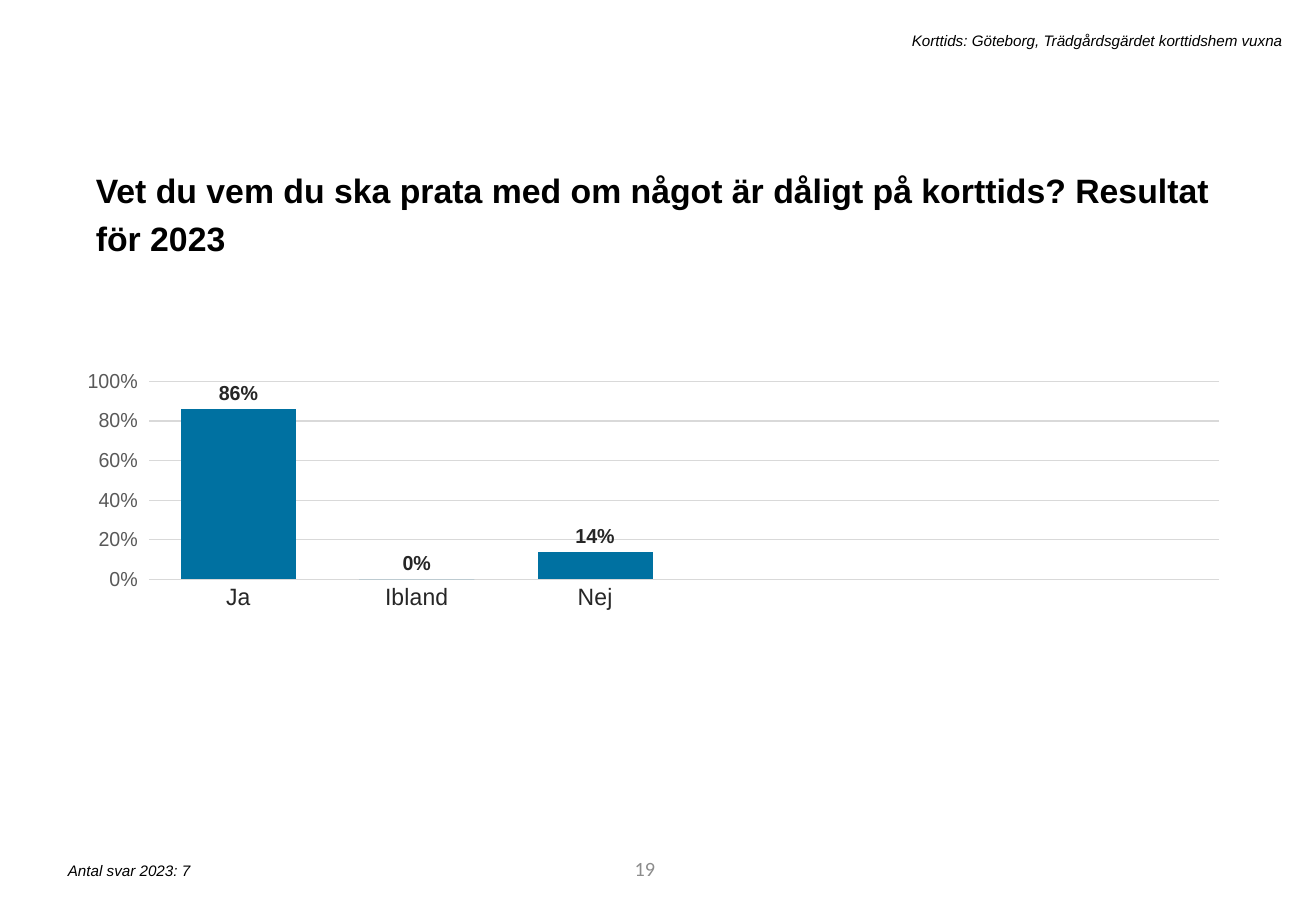
import pptx
import pptx.chart.data
import pptx.dml.color
import pptx.enum.chart
import pptx.enum.text
import pptx.oxml
import pptx.oxml.ns
import pptx.util

SCALE = 9144  # EMU per px, 100 px to the inch
ALIGN = pptx.enum.text.PP_ALIGN
ANCHOR = pptx.enum.text.MSO_ANCHOR
FIT = pptx.enum.text.MSO_AUTO_SIZE
TICK = pptx.enum.chart.XL_TICK_MARK


def px(*nums):
    return [pptx.util.Emu(n * SCALE) for n in nums]


def tint(code):
    return pptx.dml.color.RGBColor.from_string(code)


class Deck:
    font = "Arial"
    black = "000000"
    dark = "262626"
    grey = "595959"
    pale = "8C8C8C"
    rule = "D9D9D9"
    blue = "0071A1"

    def __init__(self, wide, high):
        self.file = pptx.Presentation()
        self.file.slide_width, self.file.slide_height = px(wide, high)
        self.slide = self.file.slides.add_slide(self.file.slide_layouts[6])

    def style(self, font, size, color, bold=False, ital=False, name=None):
        font.name = name or self.font
        font.size = pptx.util.Pt(size)
        font.bold = bold
        font.italic = ital
        font.color.rgb = tint(color)

    def text(self, box, words, size, color=black, align=ALIGN.LEFT,
             anchor=ANCHOR.TOP, fit=FIT.SHAPE_TO_FIT_TEXT, **look):
        """Add a one-paragraph text box and return the paragraph."""
        frame = self.slide.shapes.add_textbox(*px(*box)).text_frame
        frame.word_wrap = True
        frame.auto_size = fit
        frame.vertical_anchor = anchor
        para = frame.paragraphs[0]
        para.alignment = align
        run = para.add_run()
        run.text = words
        self.style(run.font, size, color, **look)
        return para

    def line(self, form):
        form.line.color.rgb = tint(self.rule)
        form.line.width = pptx.util.Pt(0.75)

    def place(self, chart, box, plot):
        """Fix the inner plot area; plot is in px from the chart corner."""
        sizes = (box[2], box[3]) * 2
        parts = [f'<c:{key}Mode val="edge"/>' for key in "xy"]
        parts += [f'<c:{key} val="{num / size}"/>'
                  for key, num, size in zip("xywh", plot, sizes)]
        layout = pptx.oxml.parse_xml(
            f'<c:layout {pptx.oxml.ns.nsdecls("c")}><c:manualLayout>'
            f'<c:layoutTarget val="inner"/>{"".join(parts)}'
            '</c:manualLayout></c:layout>')
        area = chart.element.find(".//" + pptx.oxml.ns.qn("c:plotArea"))
        for old in area.findall(pptx.oxml.ns.qn("c:layout")):
            area.remove(old)
        area.insert(0, layout)

    def bars(self, box, plot, cats, vals):
        data = pptx.chart.data.CategoryChartData(number_format="0%")
        data.categories = cats
        data.add_series("Series 1", vals)
        kind = pptx.enum.chart.XL_CHART_TYPE.COLUMN_CLUSTERED
        chart = self.slide.shapes.add_chart(kind, *px(*box), data).chart
        chart.has_legend = False
        chart.has_title = False
        self.style(chart.font, 10, self.black)
        self.place(chart, box, plot)

        names = chart.category_axis
        names.major_tick_mark = TICK.NONE
        self.style(names.tick_labels.font, 14, self.dark)
        self.line(names.format)

        scale = chart.value_axis
        scale.minimum_scale, scale.maximum_scale = 0, 1
        scale.major_unit = 0.2
        scale.major_tick_mark = TICK.OUTSIDE
        scale.format.line.fill.background()
        scale.tick_labels.number_format = "0%"
        scale.tick_labels.number_format_is_linked = False
        self.style(scale.tick_labels.font, 12, self.grey)
        self.line(scale.major_gridlines.format)

        group = chart.plots[0]
        group.gap_width = 55
        group.vary_by_categories = False
        series = group.series[0]
        series.invert_if_negative = False
        series.format.fill.solid()
        series.format.fill.fore_color.rgb = tint(self.blue)
        labels = series.data_labels
        labels.show_value = True
        labels.position = pptx.enum.chart.XL_LABEL_POSITION.OUTSIDE_END
        labels.number_format = "0%"
        labels.number_format_is_linked = False
        self.style(labels.font, 12, self.dark, bold=True)


def main():
    deck = Deck(1083, 750)
    deck.text((305, 695, 244, 40), "19", 12, deck.pale, ALIGN.RIGHT,
              ANCHOR.MIDDLE, FIT.NONE, name="Calibri")
    title = deck.text(
        (69, 128, 940, 47),
        "Vet du vem du ska prata med om något är dåligt på korttids? "
        "Resultat för 2023", 20, bold=True)
    title.line_spacing = 1.2
    title.space_before = pptx.util.Pt(10)
    deck.text((179, 21, 886, 25),
              "Korttids: Göteborg, Trädgårdsgärdet korttidshem vuxna", 9,
              align=ALIGN.RIGHT, ital=True)
    deck.text((46, 704, 441, 25), "Antal svar 2023: 7", 9, ital=True)
    deck.bars((72, 253, 940, 395), (23, 61, 908, 163),
              ["Ja", "Ibland", "Nej", "", "", ""],
              [0.86, 0, 0.14, None, None, None])
    deck.file.save("out.pptx")


if __name__ == "__main__":
    main()
